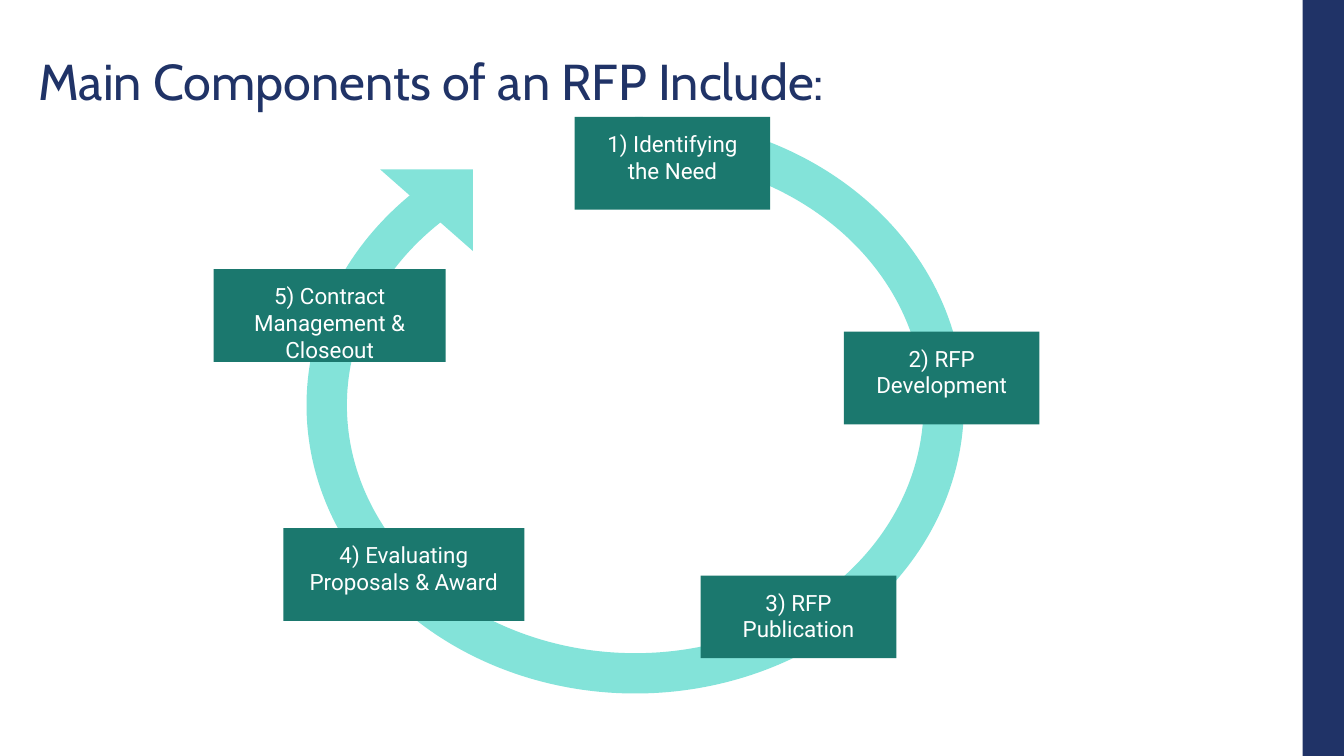
from pptx import Presentation
from pptx.dml.color import RGBColor
from pptx.enum.shapes import MSO_SHAPE
from pptx.enum.text import MSO_ANCHOR, MSO_AUTO_SIZE, PP_ALIGN
from pptx.util import Inches, Pt

RECT, ARC, TRIANGLE = MSO_SHAPE.RECTANGLE, MSO_SHAPE.BLOCK_ARC, MSO_SHAPE.RIGHT_TRIANGLE
TOP, MIDDLE = MSO_ANCHOR.TOP, MSO_ANCHOR.MIDDLE
LEFT, CENTER = PP_ALIGN.LEFT, PP_ALIGN.CENTER
NO_FIT = MSO_AUTO_SIZE.NONE

NAVY, TEAL, MINT, WHITE = "203367", "1B786E", "83E3D9", "FFFFFF"

STEPS = [
    ("1) Identifying\nthe Need", 2.66, 0, 1.94, 0.92),
    ("2) RFP Development", 5.33, 2.13, 1.94, 0.92),
    ("3) RFP Publication", 3.91, 4.55, 1.94, 0.82),
    ("4) Evaluating Proposals & Award", -0.23, 4.08, 2.39, 0.92),
    ("5) Contract Management & Closeout", -0.92, 1.51, 2.3, 0.92),
]


def rgb(value):
    return RGBColor.from_string(value)


def add_block(s, kind, box, color):
    sp = s.shapes.add_shape(kind, *map(Inches, box))
    sp.shadow.inherit = False
    sp.fill.solid()
    sp.fill.fore_color.rgb = rgb(color)
    sp.line.fill.background()
    return sp


def write(tf, text, size, font, color, align, anchor):
    tf.word_wrap = True
    tf.auto_size = NO_FIT
    tf.vertical_anchor = anchor
    p = tf.paragraphs[0]
    p.alignment = align
    for i, line in enumerate(text.split("\n")):
        if i:
            p.add_line_break()
        r = p.add_run()
        r.text = line
        r.font.size = Pt(size)
        r.font.name = font
        r.font.color.rgb = rgb(color)
    return p


def add_title(s, text, box):
    sp = s.shapes.title
    sp.left, sp.top, sp.width, sp.height = map(Inches, box)
    p = write(sp.text_frame, text, 36, "Cabin", NAVY, LEFT, MIDDLE)
    p.line_spacing = 0.9


def add_step(s, text, box):
    tf = add_block(s, RECT, box, TEAL).text_frame
    tf.margin_left = tf.margin_right = tf.margin_top = tf.margin_bottom = Inches(0.13)
    write(tf, text, 16, "Roboto", WHITE, CENTER, TOP)


def add_cycle(s, box):
    x, y, w, h = box
    ring = add_block(s, ARC, box, MINT)
    for i, value in enumerate((54, 30.13, 0.07)):
        ring.adjustments[i] = value
    head = add_block(s, TRIANGLE, (x + 0.73, y + 0.52, 0.92, 0.81), MINT)
    ring.rotation = head.rotation = 180
    for text, dx, dy, width, height in STEPS:
        add_step(s, text, (x + dx, y + dy, width, height))


def main():
    prs = Presentation()
    prs.slide_width, prs.slide_height = Inches(13.33), Inches(7.5)
    s = prs.slides.add_slide(prs.slide_layouts[5])
    add_block(s, RECT, (12.92, 0, 0.41, 7.5), NAVY)
    add_title(s, "Main Components of an RFP Include:", (0.28, 0.43, 9.9, 0.82))
    add_cycle(s, (3.04, 1.16, 6.52, 5.72))
    prs.save("out.pptx")


if __name__ == "__main__":
    main()
